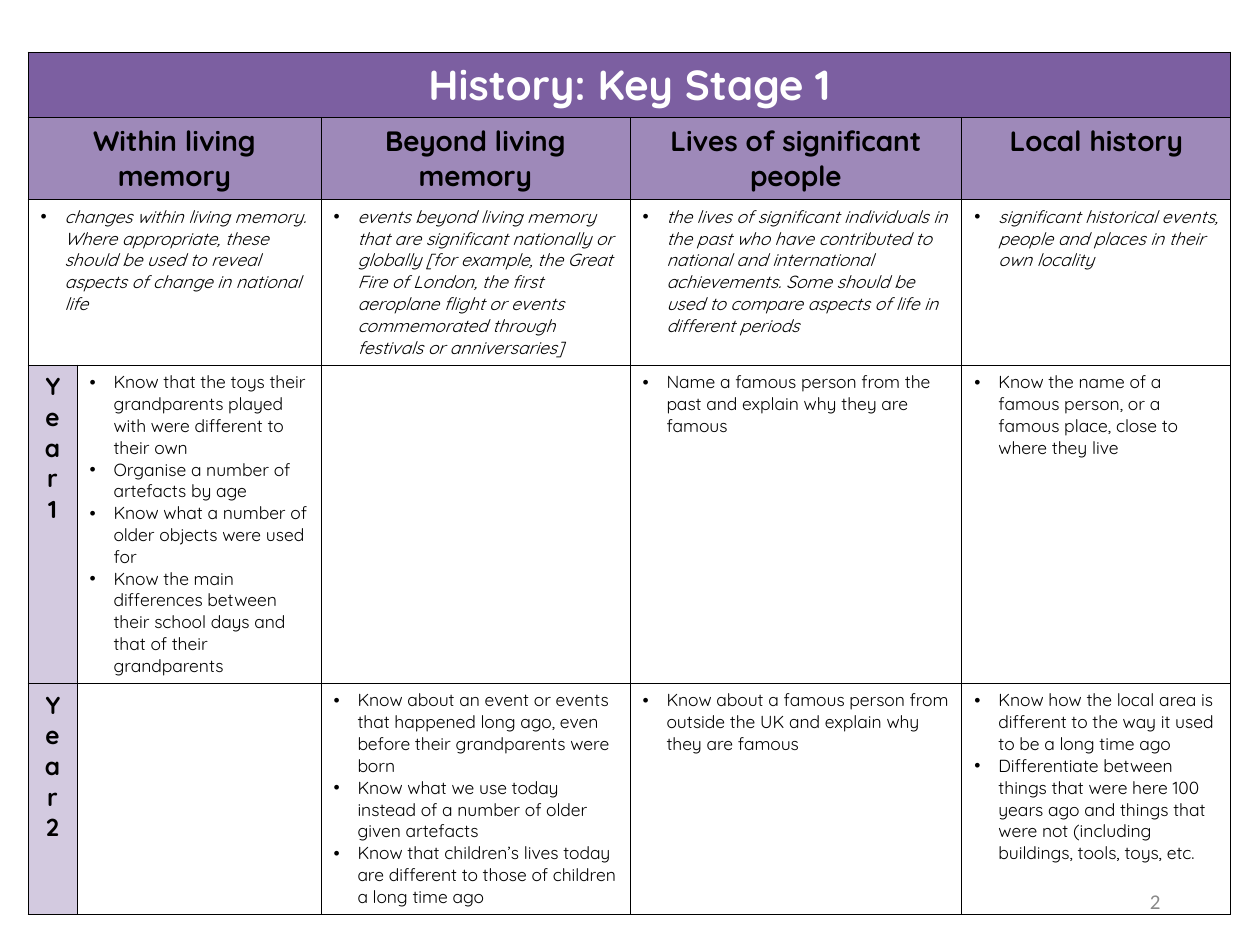
from lxml.etree import SubElement
from pptx import Presentation
from pptx.dml.color import RGBColor
from pptx.enum.text import MSO_ANCHOR as Anchor, PP_ALIGN as Align
from pptx.oxml import parse_xml
from pptx.oxml.ns import nsdecls, qn
from pptx.util import Emu, Pt

PIXEL = 914400 / 126
BLACK = RGBColor(0x00, 0x00, 0x00)
WHITE = RGBColor(0xFF, 0xFF, 0xFF)
GREY = RGBColor(0x89, 0x89, 0x89)
PURPLE = RGBColor(0x7C, 0x5F, 0xA1)
MAUVE = RGBColor(0x9E, 0x89, 0xB9)
LILAC = RGBColor(0xD3, 0xCA, 0xE0)

COLUMN_WIDTHS = [49, 244, 309, 332, 269]
ROW_HEIGHTS = [65, 82, 165, 318, 231]

THEMES = ["Within living memory", "Beyond living memory",
          "Lives of significant people", "Local history"]
CURRICULUM = [
    "changes within living memory. Where appropriate, these should be used to reveal "
    "aspects of change in national life",
    "events beyond living memory that are significant nationally or globally [for example, "
    "the Great Fire of London, the first aeroplane flight or events commemorated through "
    "festivals or anniversaries]",
    "the lives of significant individuals in the past who have contributed to national and "
    "international achievements. Some should be used to compare aspects of life in "
    "different periods",
    "significant historical events, people and places in their own locality",
]
YEARS = {
    "Year 1": [
        ["Know that the toys their grandparents played with were different to their own",
         "Organise a number of artefacts by age",
         "Know what a number of older objects were used for",
         "Know the main differences between their school days and that of their grandparents"],
        [],
        ["Name a famous person from the past and explain why they are famous"],
        ["Know the name of a famous person, or a famous place, close to where they live"],
    ],
    "Year 2": [
        [],
        ["Know about an event or events that happened long ago, even before their "
         "grandparents were born",
         "Know what we use today instead of a number of older given artefacts",
         "Know that children’s lives today are different to those of children a long time ago"],
        ["Know about a famous person from outside the UK and explain why they are famous"],
        ["Know how the local area is different to the way it used to be a long time ago",
         "Differentiate between things that were here 100 years ago and things that were not "
         "(including buildings, tools, toys, etc."],
    ],
}


def px(length):
    return Emu(round(length * PIXEL))


class SlideBuilder:
    font = "Quicksand"
    bullet_indent = 24

    def __init__(self, slide):
        self.slide = slide

    def format_runs(self, paragraph, size, color=BLACK, bold=False, italic=False, font=None):
        for run in paragraph.runs:
            run.font.name = font or self.font
            run.font.size = Pt(size)
            run.font.bold = bold
            run.font.italic = italic
            run.font.color.rgb = color

    def table(self, left, top, widths, heights):
        frame = self.slide.shapes.add_table(len(heights), len(widths), px(left), px(top),
                                            px(sum(widths)), px(sum(heights)))
        table = frame.table
        table.first_row = table.horz_banding = False
        for column, width in zip(table.columns, widths):
            column.width = px(width)
        for row, height in zip(table.rows, heights):
            row.height = px(height)
        for cell in table.iter_cells():
            cell.fill.background()
            self.border(cell)
        return table

    def border(self, cell):
        properties = cell._tc.get_or_add_tcPr()
        for position, side in enumerate(["lnL", "lnR", "lnT", "lnB"]):
            properties.insert(position, parse_xml(
                f'<a:{side} {nsdecls("a")} w="{Pt(0.5)}"><a:solidFill>'
                f'<a:srgbClr val="{BLACK}"/></a:solidFill></a:{side}>'))

    def heading(self, cell, text, size, fill, color=BLACK):
        cell.text_frame.text = text
        cell.fill.solid()
        cell.fill.fore_color.rgb = fill
        paragraph = cell.text_frame.paragraphs[0]
        paragraph.alignment = Align.CENTER
        self.format_runs(paragraph, size, color, bold=True)

    def vertical_heading(self, cell, text, size, fill):
        self.heading(cell, text, size, fill)
        cell._tc.get_or_add_tcPr().set("vert", "eaVert")

    def bullets(self, cell, items, size=10, italic=False):
        cell.text_frame.text = "\n".join(items)
        if not items:
            return
        for paragraph in cell.text_frame.paragraphs:
            self.format_runs(paragraph, size, italic=italic)
            properties = paragraph._p.get_or_add_pPr()
            properties.set("marL", str(px(self.bullet_indent)))
            properties.set("indent", str(-px(self.bullet_indent)))
            SubElement(properties, qn("a:buFont"), typeface="Arial")
            SubElement(properties, qn("a:buChar"), char="•")

    def page_number(self, left, top, width, height, text):
        text_frame = self.slide.shapes.add_textbox(px(left), px(top), px(width),
                                                   px(height)).text_frame
        text_frame.word_wrap = True
        text_frame.vertical_anchor = Anchor.MIDDLE
        text_frame.text = text
        paragraph = text_frame.paragraphs[0]
        paragraph.alignment = Align.RIGHT
        self.format_runs(paragraph, 12, GREY, font="Calibri")


def main():
    presentation = Presentation()
    presentation.slide_width, presentation.slide_height = px(1260), px(945)
    builder = SlideBuilder(presentation.slides.add_slide(presentation.slide_layouts[6]))

    table = builder.table(28, 52, COLUMN_WIDTHS, ROW_HEIGHTS)
    table.cell(0, 0).merge(table.cell(0, 4))
    for row in (1, 2):
        table.cell(row, 0).merge(table.cell(row, 1))

    builder.heading(table.cell(0, 0), "History: Key Stage 1", 24, PURPLE, WHITE)
    for column, theme, aim in zip([0, 2, 3, 4], THEMES, CURRICULUM):
        builder.heading(table.cell(1, column), theme, 16, MAUVE)
        builder.bullets(table.cell(2, column), [aim], italic=True)
    for row, (year, goals) in enumerate(YEARS.items(), start=3):
        builder.vertical_heading(table.cell(row, 0), year, 14, LILAC)
        for column, items in enumerate(goals, start=1):
            builder.bullets(table.cell(row, column), items)

    builder.page_number(890, 876, 283, 50, "2")
    presentation.save("out.pptx")


if __name__ == "__main__":
    main()
